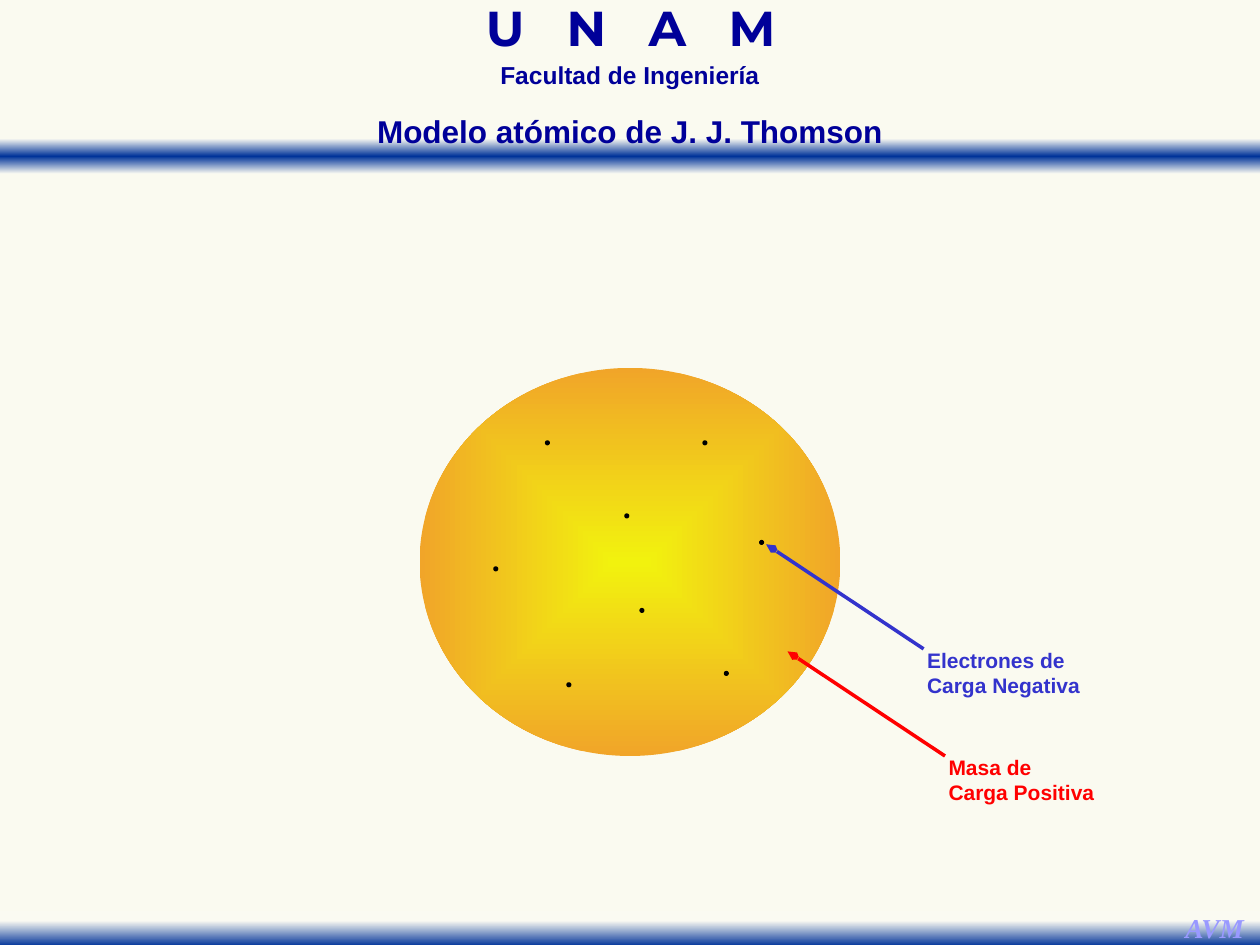
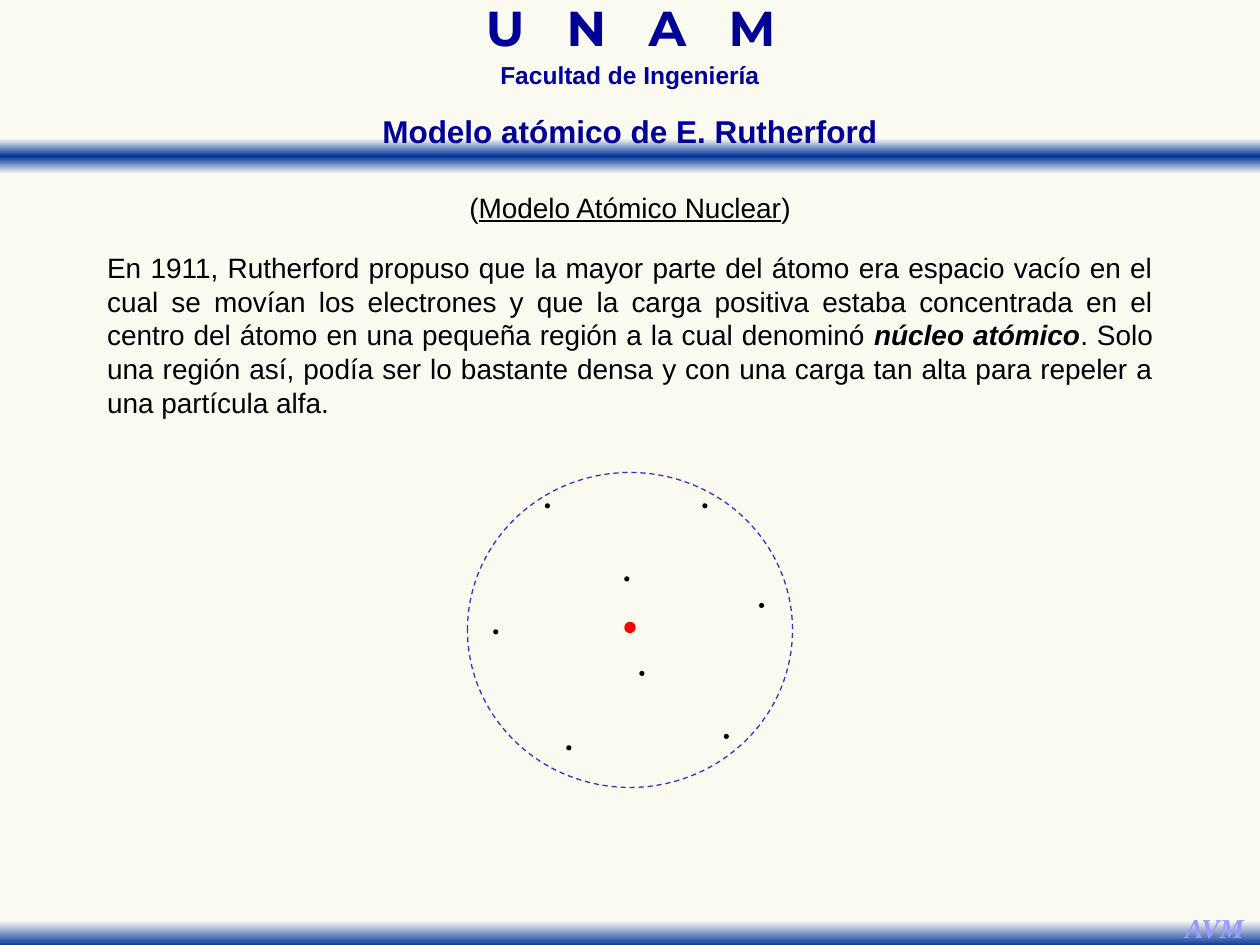
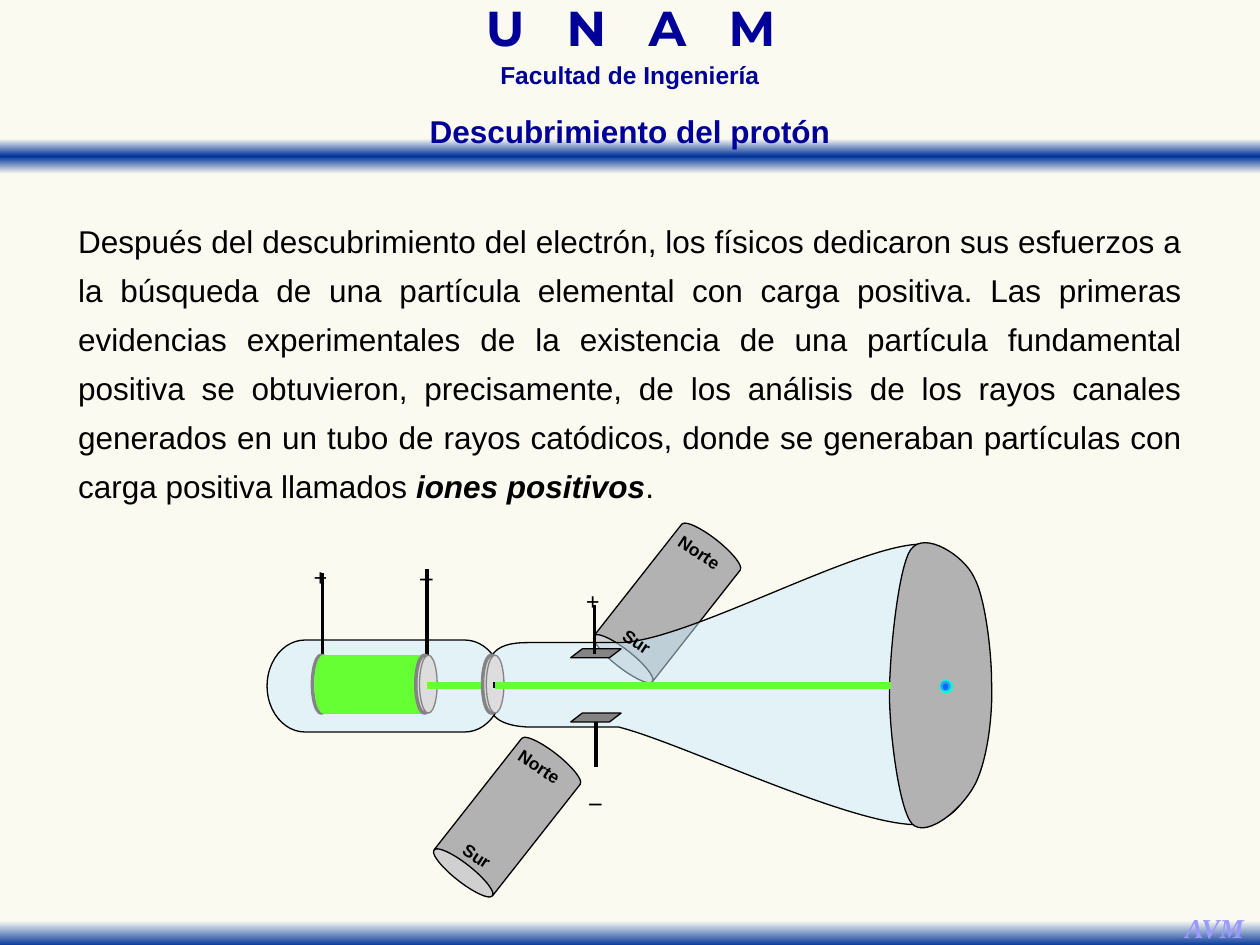
from dataclasses import dataclass
from pptx import Presentation
from pptx.dml.color import RGBColor
from pptx.enum.dml import MSO_LINE
from pptx.enum.shapes import MSO_CONNECTOR, MSO_SHAPE as Geometry
from pptx.enum.text import MSO_ANCHOR, MSO_AUTO_SIZE, PP_ALIGN as Align
from pptx.oxml import parse_xml
from pptx.oxml.ns import nsdecls
from pptx.util import Inches, Pt


@dataclass(frozen=True)
class Theme:
    paper: str = "FAFAF0"
    band_edge: str = "FAFAF2"
    band: str = "003399"
    heading: str = "000099"
    signature: str = "9999FF"
    ink: str = "000000"
    negative: str = "3333CC"
    positive: str = "FF0000"
    core: str = "F2F20E"
    rim: str = "F1A529"
    glass: str = "CCECFF"
    ray: str = "66FF33"
    magnet: str = "B2B2B2"
    disc: str = "DDDDDD"
    metal: str = "848484"
    slot: str = "000066"
    sans: str = "Arial"
    serif: str = "Times New Roman"
    display: str = "Montserrat"
    school: float = 28
    sign: float = 24
    title: float = 18
    body: float = 16
    initials: float = 15.6
    faculty: float = 14
    label: float = 12
    pole: float = 10


T = Theme()
PLAIN = {}
STRONG = {"bold": True, "italic": True}
UNDERLINED = {"underline": True}

TITLES = [
    "Modelo atómico de J. J. Thomson",
    "Modelo atómico de E. Rutherford",
    "Descubrimiento del protón",
]
TITLE_BOX = (2.83, 0.84, 4.34, 0.4)

ELECTRONS = [(4.33, 3.5), (5.58, 3.5), (4.96, 4.08), (3.92, 4.5),
             (6.03, 4.29), (5.08, 4.83), (5.75, 5.33), (4.5, 5.42)]
CALLOUTS = [
    (["Masa de", "Carga Positiva"], T.positive, (7.43, 5.94, 1.36, 0.5), (7.5, 6), (6.25, 5.17)),
    (["Electrones de", "Carga Negativa"], T.negative, (7.26, 5.09, 1.43, 0.5), (7.33, 5.15), (6.08, 4.32)),
]

NUCLEAR_NAME = [("(", PLAIN), ("Modelo Atómico Nuclear", UNDERLINED), (")", PLAIN)]
NUCLEAR_TEXT = [
    ("En 1911, Rutherford propuso que la mayor parte del átomo era espacio vacío en el cual se movían "
     "los electrones y que la carga positiva estaba concentrada en el centro del átomo en una pequeña "
     "región a la cual denominó ", PLAIN),
    ("núcleo atómico", STRONG),
    (". Solo una región así, podía ser lo bastante densa y con una carga tan alta para repeler a una "
     "partícula alfa.", PLAIN),
]
PROTON_TEXT = [
    ("Después del descubrimiento del electrón, los físicos dedicaron sus esfuerzos a la búsqueda de una "
     "partícula elemental con carga positiva. Las primeras evidencias experimentales de la existencia de "
     "una partícula fundamental positiva se obtuvieron, precisamente, de los análisis de los rayos canales "
     "generados en un tubo de rayos catódicos, donde se generaban partículas con carga positiva llamados ",
     PLAIN),
    ("iones positivos", STRONG),
    (".", PLAIN),
]

FLASK_START = (3.9, 5.21)
FLASK_CURVES = [
    ((3.95, 5.12), (4.06, 5.1), (4.19, 5.1)),
    ((4.31, 5.1), (4.44, 5.1), (4.91, 5.1)),
    ((5.45, 5.1), (6.87, 4.28), (7.35, 4.32)),
    ((7.83, 4.37), (7.8, 5), (7.8, 5.37)),
    ((7.8, 5.74), (7.83, 6.48), (7.35, 6.54)),
    ((6.87, 6.61), (5.43, 5.9), (4.91, 5.77)),
    ((4.45, 5.77), (4.3, 5.77), (4.21, 5.77)),
    ((4.12, 5.77), (3.95, 5.75), (3.9, 5.65)),
]
SCREEN_START = (7.06, 5.45)
SCREEN_CURVES = [
    ((7.07, 5.08), (7.14, 4.48), (7.23, 4.36)),
    ((7.34, 4.21), (7.65, 4.41), (7.73, 4.58)),
    ((7.82, 4.74), (7.87, 5.18), (7.87, 5.41)),
    ((7.88, 5.63), (7.85, 5.96), (7.76, 6.18)),
    ((7.67, 6.4), (7.36, 6.66), (7.24, 6.54)),
    ((7.13, 6.42), (7.05, 5.74), (7.06, 5.45)),
]
UPPER_MAGNET, LOWER_MAGNET = (5, 4.15, 0.59, 1.27), (3.73, 5.85, 0.59, 1.27)
POLES = [("Sur", (4.84, 4.96, 0.43, 0.27)), ("Norte", (4, 5.95, 0.56, 0.27)),
         ("Sur", (3.57, 6.66, 0.43, 0.27)), ("Norte", (5.27, 4.25, 0.56, 0.27))]
SIGNS = [("_", (3.23, 4.3, 0.31, 0.37), 30), ("+", (2.38, 4.19, 0.33, 0.37), -25),
         ("+", (4.54, 4.56, 0.33, 0.37), 30), ("_", (4.57, 5.9, 0.31, 0.37), -25)]
SPOT = [((7.46, 5.4, 0.1, 0.1), "00FFCC"), ((7.47, 5.41, 0.07, 0.07), "3399FF"),
        ((7.49, 5.43, 0.03, 0.04), "0066FF")]
RAY_Y = 5.44
DISC = {"top": 5.2, "width": 0.14, "height": 0.46}


def inches(values):
    return [Inches(value) for value in values]


def set_values(target, values):
    for name, value in values.items():
        setattr(target, name, value)


def add_runs(para, runs, size, color, family=T.sans, bold=False):
    for text, style in runs:
        span = para.add_run()
        span.text = text
        set_values(span.font, {"name": family, "size": Pt(size), "bold": bold, **style})
        span.font.color.rgb = RGBColor.from_string(color)


def add_text(page, bounds, lines, size, color, family=T.sans, bold=False, wrap=False, rotation=0, **layout):
    box = page.shapes.add_textbox(*inches(bounds))
    box.rotation = rotation
    set_values(box.text_frame, {"word_wrap": wrap, "auto_size": MSO_AUTO_SIZE.SHAPE_TO_FIT_TEXT})
    for index, runs in enumerate(lines):
        para = box.text_frame.add_paragraph() if index else box.text_frame.paragraphs[0]
        set_values(para, layout)
        add_runs(para, runs, size, color, family, bold)
    return box


def fill_placeholder(holder, bounds, runs, size, color, bold=False, **layout):
    set_values(holder, dict(zip(("left", "top", "width", "height"), inches(bounds))))
    set_values(holder.text_frame, {"word_wrap": True, "auto_size": MSO_AUTO_SIZE.NONE,
                                   "vertical_anchor": MSO_ANCHOR.TOP})
    para = holder.text_frame.paragraphs[0]
    properties = para._p.get_or_add_pPr()
    set_values(para, {"space_before": Pt(0), **layout})
    properties.set("marL", "0")
    properties.set("indent", "0")
    properties.append(parse_xml(f"<a:buNone {nsdecls('a')}/>"))
    add_runs(para, runs, size, color, bold=bold)


def paint(shape, fill=None, line=None, width=0.75, alpha=None):
    shape.shadow.inherit = False
    if fill:
        shape.fill.solid()
        shape.fill.fore_color.rgb = RGBColor.from_string(fill)
        if alpha:
            color = shape.element.spPr.find(".//{*}srgbClr")
            color.append(parse_xml(f'<a:alpha {nsdecls("a")} val="{alpha * 1000}"/>'))
    else:
        shape.fill.background()
    if line:
        shape.line.color.rgb = RGBColor.from_string(line)
        shape.line.width = Pt(width)
    else:
        shape.line.fill.background()
    return shape


def add_figure(page, geometry, bounds, fill=None, line=None, width=0.75, alpha=None, adjust=None, rotation=0):
    shape = page.shapes.add_shape(geometry, *inches(bounds))
    if adjust:
        shape.adjustments[0] = adjust
    shape.rotation = rotation
    return paint(shape, fill, line, width, alpha)


def add_gradient(page, geometry, bounds, stops, direction):
    shape = add_figure(page, geometry, bounds)
    marks = "".join(f'<a:gs pos="{place * 1000}"><a:srgbClr val="{color}"/></a:gs>' for place, color in stops)
    gradient = parse_xml(f'<a:gradFill {nsdecls("a")} rotWithShape="1"><a:gsLst>{marks}</a:gsLst>'
                         f"{direction}</a:gradFill>")
    properties = shape.element.spPr
    properties.replace(properties.find("{*}noFill"), gradient)
    return shape


def add_line(page, start, end, color=T.ink, width=2, arrow=False):
    line = page.shapes.add_connector(MSO_CONNECTOR.STRAIGHT, *inches(start + end))
    line.line.color.rgb = RGBColor.from_string(color)
    line.line.width = Pt(width)
    if arrow:
        head = parse_xml(f'<a:tailEnd {nsdecls("a")} type="arrow" w="sm" len="med"/>')
        line.element.spPr.find("{*}ln").append(head)
    line.element.spPr.append(parse_xml(f"<a:effectLst {nsdecls('a')}/>"))


def add_outline(page, start, curves, **look):
    ends = [inches(curve[-1]) for curve in curves]
    builder = page.shapes.build_freeform(*inches(start))
    builder.add_line_segments(ends, close=True)
    shape = paint(builder.convert_to_shape(), **look)
    segments = shape.element.spPr.findall(".//{*}lnTo")
    for segment, curve in zip(segments, curves):
        points = "".join(f'<a:pt x="{Inches(x) - shape.left}" y="{Inches(y) - shape.top}"/>' for x, y in curve)
        bend = parse_xml(f"<a:cubicBezTo {nsdecls('a')}>{points}</a:cubicBezTo>")
        segment.getparent().replace(segment, bend)


def add_electrons(page, drop=0):
    for x, y in ELECTRONS:
        add_figure(page, Geometry.OVAL, (x, y + drop, 0.03, 0.03), T.ink, T.ink)


def add_disc(page, left, fill=T.disc, line=T.metal, width=0.75):
    bounds = (left, DISC["top"], DISC["width"], DISC["height"])
    add_figure(page, Geometry.OVAL, bounds, fill, line, width)


def add_electrode(page, left):
    add_disc(page, left, width=2)
    add_disc(page, left + 0.03)
    add_figure(page, Geometry.RECTANGLE, (left + 0.09, 5.42, 0.02, 0.04), T.slot, T.ink, 0.5)


def add_plate(page, top):
    add_figure(page, Geometry.PARALLELOGRAM, (4.53, top, 0.4, 0.07), T.metal, T.ink, adjust=1.312)


def add_magnet(page, bounds):
    add_figure(page, Geometry.CAN, bounds, T.magnet, T.ink, adjust=0.244, rotation=218.2)


def decorate_master(deck, page):
    master = deck.slide_master
    master.background.fill.solid()
    master.background.fill.fore_color.rgb = RGBColor.from_string(T.paper)
    down = '<a:lin ang="5400000" scaled="1"/>'
    centred = {"alignment": Align.CENTER}
    heading = {"color": T.heading, "bold": True, "wrap": True, "line_spacing": 0.7, **centred}
    school = add_text(page, (3.05, 0.06, 3.91, 0.43), [[("U N A ", PLAIN), ("M", PLAIN)]],
                      T.school, family=T.display, **heading)
    school.text_frame.paragraphs[0].runs[0]._r.get_or_add_rPr().set("spc", "815")
    parts = [
        add_gradient(page, Geometry.RECTANGLE, (0, 1.1, 10, 0.28),
                     [(0, T.band_edge), (50, T.band), (100, T.band_edge)], down),
        school,
        add_text(page, (3.21, 0.49, 3.58, 0.27), [[("Facultad de Ingeniería", PLAIN)]], T.faculty, **heading),
        add_gradient(page, Geometry.RECTANGLE, (0, 7.23, 10, 0.28), [(28, T.band_edge), (100, T.band)], down),
        add_text(page, (9.3, 7.18, 0.68, 0.37), [[("AVM", STRONG)]], T.initials, T.signature, T.serif, **centred),
    ]
    tree = master.element.cSld.spTree
    for number, part in enumerate(parts, 100):
        part.element.xpath(".//p:cNvPr")[0].set("id", str(number))
        tree.append(part.element)


def draw_thomson(page):
    middle = '<a:path path="shape"><a:fillToRect l="50000" t="50000" r="50000" b="50000"/></a:path>'
    add_gradient(page, Geometry.OVAL, (3.33, 2.92, 3.34, 3.08), [(0, T.core), (100, T.rim)], middle)
    add_electrons(page)
    for lines, color, bounds, start, end in CALLOUTS:
        add_line(page, start, end, color, arrow=True)
        add_text(page, bounds, [[(line, PLAIN)] for line in lines], T.label, color, bold=True)


def draw_rutherford(page):
    add_figure(page, Geometry.OVAL, (4.96, 4.94, 0.08, 0.08), T.positive, T.positive)
    add_text(page, (2.83, 1.46, 4.34, 0.37), [NUCLEAR_NAME], T.body, T.ink, wrap=True, alignment=Align.CENTER)
    fill_placeholder(page.placeholders[1], (0.75, 1.94, 8.5, 1.45), NUCLEAR_TEXT, T.body, T.ink,
                     alignment=Align.JUSTIFY)
    add_electrons(page, drop=0.5)
    orbit = add_figure(page, Geometry.OVAL, (3.71, 3.75, 2.58, 2.5), line=T.negative)
    orbit.line.dash_style = MSO_LINE.DASH


def draw_proton(page):
    fill_placeholder(page.placeholders[1], (0.52, 1.62, 8.96, 2.44), PROTON_TEXT, T.title, T.ink,
                     alignment=Align.JUSTIFY, line_spacing=1.3)
    add_magnet(page, UPPER_MAGNET)
    glass = {"fill": T.glass, "line": T.ink, "alpha": 50}
    add_outline(page, FLASK_START, FLASK_CURVES, **glass)
    add_figure(page, Geometry.FLOWCHART_TERMINATOR, (2.12, 5.08, 1.87, 0.73), **glass)
    add_line(page, (2.56, 5.22), (2.56, 4.55))
    add_line(page, (3.39, 5.21), (3.39, 4.52))
    add_disc(page, 2.48, width=2)
    add_disc(page, 2.5, T.ray, T.ray)
    add_figure(page, Geometry.RECTANGLE, (2.58, 5.2, 0.79, 0.46), T.ray, T.ray)
    add_electrode(page, 3.3)
    add_line(page, (3.97, RAY_Y), (3.39, RAY_Y), T.ray, 4)
    add_electrode(page, 3.83)
    add_plate(page, 5.15)
    add_line(page, (4.72, 5.19), (4.72, 4.8))
    add_line(page, (4.73, 6.09), (4.73, 5.7))
    add_plate(page, 5.66)
    add_outline(page, SCREEN_START, SCREEN_CURVES, fill=T.magnet, line=T.ink)
    add_magnet(page, LOWER_MAGNET)
    for name, bounds in POLES:
        add_text(page, bounds, [[(name, PLAIN)]], T.pole, T.ink, bold=True, rotation=33.2, alignment=Align.CENTER)
    for bounds, color in SPOT:
        add_figure(page, Geometry.OVAL, bounds, color, color)
    for sign, bounds, shift in SIGNS:
        box = add_text(page, bounds, [[(sign, PLAIN)]], T.sign, T.ink, T.serif, bold=True, alignment=Align.CENTER)
        box.text_frame.paragraphs[0].runs[0]._r.get_or_add_rPr().set("baseline", str(shift * 1000))
    add_line(page, (7.07, RAY_Y), (3.93, RAY_Y), T.ray, 4)


def main():
    deck = Presentation()
    deck.slide_width, deck.slide_height = inches((10, 7.5))
    text_layout, title_layout = deck.slide_layouts[1], deck.slide_layouts[5]
    plans = zip(TITLES, (title_layout, text_layout, text_layout), (draw_thomson, draw_rutherford, draw_proton))
    for index, (title, layout, draw) in enumerate(plans):
        page = deck.slides.add_slide(layout)
        if index == 0:
            decorate_master(deck, page)
        fill_placeholder(page.shapes.title, TITLE_BOX, [(title, PLAIN)], T.title, T.heading, True,
                         alignment=Align.CENTER)
        draw(page)
    deck.save("out.pptx")


if __name__ == "__main__":
    main()
